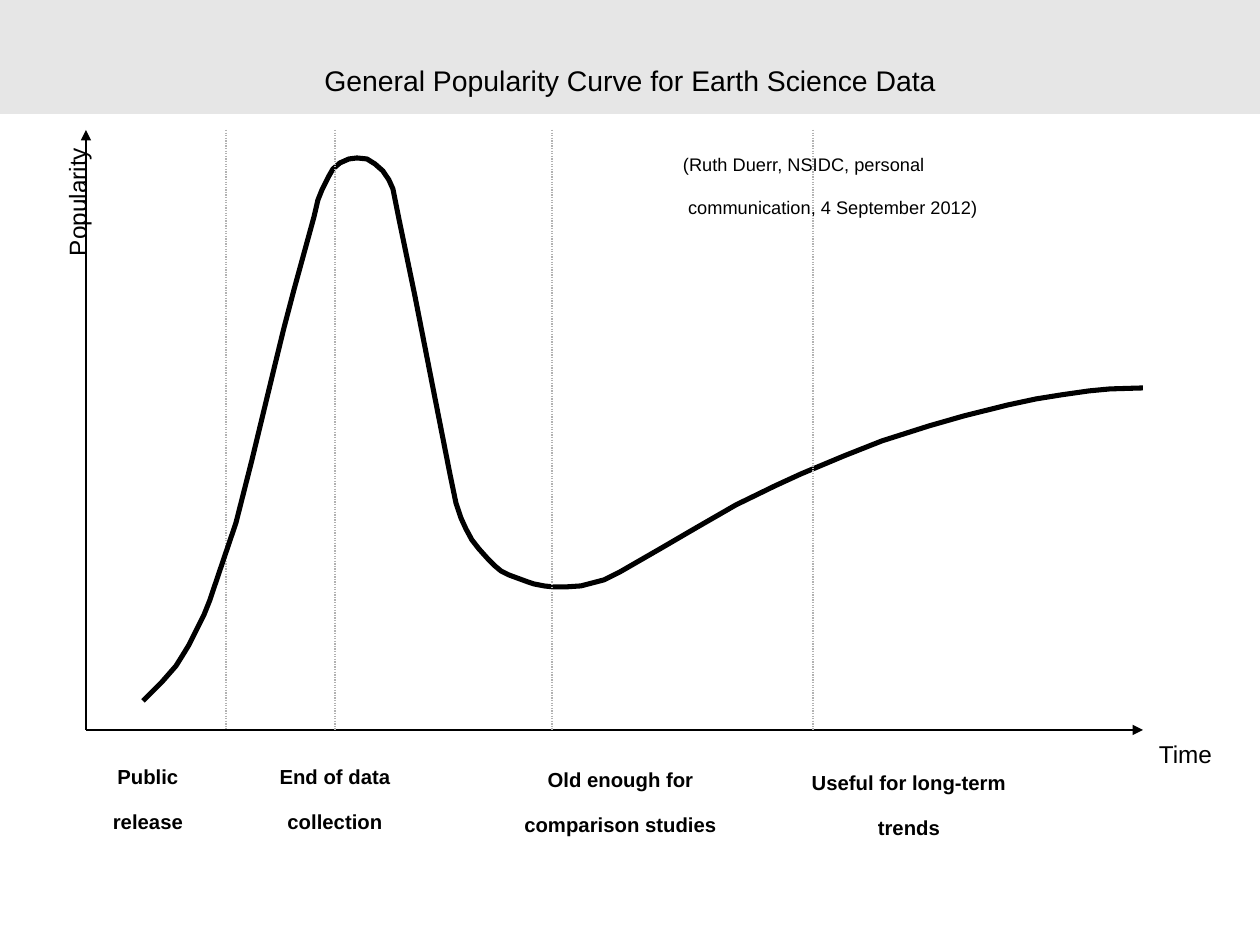
from lxml.etree import SubElement
from pptx import Presentation
from pptx.dml.color import RGBColor
from pptx.enum.dml import MSO_LINE
from pptx.enum.shapes import MSO_CONNECTOR, MSO_SHAPE
from pptx.enum.text import MSO_ANCHOR, PP_ALIGN
from pptx.oxml.ns import qn
from pptx.util import Emu, Pt

PX = 914400 // 126
COLORS = {"ink": "000000", "guide": "B2B2B2", "banner": "E6E6E6"}

TITLE = "General Popularity Curve for Earth Science Data"
CITATION = ["(Ruth Duerr, NSIDC, personal", " communication, 4 September 2012)"]
PHASES = [
    (["Public", "release"], (97, 736, 102, 88)),
    (["End of data collection"], (259, 736, 152, 62)),
    (["Old enough for comparison studies"], (485, 739, 271, 71)),
    (["Useful for long-term", "trends"], (758, 742, 302, 77)),
]
AXIS_LEFT, AXIS_TOP, AXIS_RIGHT, AXIS_BOTTOM = 86, 130, 1143, 730
GUIDES = [226, 335, 552, 813]
CURVE = [
    (143, 701), (152, 692), (162, 682), (169, 674), (176, 666), (181, 658),
    (189, 645), (195, 633), (204, 615), (210, 600), (215, 585), (236, 523),
    (252, 460), (275, 365), (284, 328), (294, 290), (314, 217), (318, 200),
    (322, 190), (329, 176), (333, 169), (340, 163), (349, 159), (357, 158),
    (367, 159), (375, 164), (383, 171), (389, 180), (393, 189), (399, 219),
    (415, 296), (435, 398), (450, 474), (456, 503), (461, 518), (466, 529),
    (472, 540), (479, 549), (488, 559), (495, 566), (501, 571), (509, 575),
    (517, 578), (528, 582), (534, 584), (544, 586), (553, 587), (566, 587),
    (581, 586), (604, 580), (620, 572), (660, 549), (696, 528), (736, 505),
    (775, 486), (801, 474), (844, 456), (882, 441), (929, 426), (964, 416),
    (1008, 405), (1036, 399), (1061, 395), (1089, 391), (1110, 389), (1143, 388),
]


def px(*values):
    return [Emu(value * PX) for value in values]


def color(name):
    return RGBColor.from_string(COLORS[name])


def write(shape, lines, size, bold=False, align=PP_ALIGN.CENTER, spacing=None):
    frame = shape.text_frame
    frame.text = "\n".join(lines)
    for para in frame.paragraphs:
        para.alignment = align
        para.line_spacing = spacing
        for span in para.runs:
            span.font.name = "Arial"
            span.font.size = Pt(size)
            span.font.bold = bold
            span.font.color.rgb = color("ink")
            span._r.get_or_add_rPr().set("baseline", "-25000")


def add_label(page, lines, place, size, wrap=True, **style):
    box = page.shapes.add_textbox(*px(*place))
    frame = box.text_frame
    frame.word_wrap = wrap
    frame.margin_left, frame.margin_top, frame.margin_right, frame.margin_bottom = px(11, 5, 11, 5)
    write(box, lines, size, **style)
    return box


def add_line(page, start, end, name):
    line = page.shapes.add_connector(MSO_CONNECTOR.STRAIGHT, *px(*start, *end))
    line.line.color.rgb = color(name)
    line.line.width = Pt(0.75)
    SubElement(line._element.spPr, qn("a:effectLst"))
    return line


def add_guide(page, x):
    guide = add_line(page, (x, AXIS_TOP), (x, AXIS_BOTTOM), "guide")
    guide.line.dash_style = MSO_LINE.ROUND_DOT


def add_axis(page, end):
    axis = add_line(page, (AXIS_LEFT, AXIS_BOTTOM), end, "ink")
    SubElement(axis.line._get_or_add_ln(), qn("a:tailEnd"), type="triangle")


def add_curve(page):
    builder = page.shapes.build_freeform(*CURVE[0], scale=PX)
    builder.add_line_segments(CURVE[1:], close=False)
    curve = builder.convert_to_shape()
    curve.shadow.inherit = False
    curve.fill.background()
    curve.line.color.rgb = color("ink")
    curve.line.width = Pt(2.89)


def add_banner(page):
    banner = page.shapes.add_shape(MSO_SHAPE.RECTANGLE, *px(0, 0, 1260, 114))
    banner.shadow.inherit = False
    banner.fill.solid()
    banner.fill.fore_color.rgb = color("banner")
    banner.line.fill.background()
    banner.text_frame.vertical_anchor = MSO_ANCHOR.MIDDLE
    banner.text_frame.margin_top = Emu(20 * PX)
    write(banner, [TITLE], 28)


def main():
    deck = Presentation()
    deck.slide_width, deck.slide_height = px(1260, 945)
    page = deck.slides.add_slide(deck.slide_layouts[6])

    add_guide(page, GUIDES[0])
    add_curve(page)
    add_axis(page, (AXIS_LEFT, AXIS_TOP))
    add_axis(page, (AXIS_RIGHT, AXIS_BOTTOM))
    for x in GUIDES[1:]:
        add_guide(page, x)

    for lines, place in PHASES:
        add_label(page, lines, place, 20, bold=True, spacing=0.93)
    add_label(page, ["Time"], (1142, 706, 87, 43), 24, wrap=False, spacing=0.93)
    popularity = add_label(page, ["Popularity"], (-29, 180, 160, 44), 24, spacing=0.93)
    popularity.rotation = 270

    add_banner(page)
    add_label(page, CITATION, (672, 127, 547, 89), 18, align=PP_ALIGN.LEFT)
    deck.save("out.pptx")


if __name__ == "__main__":
    main()
